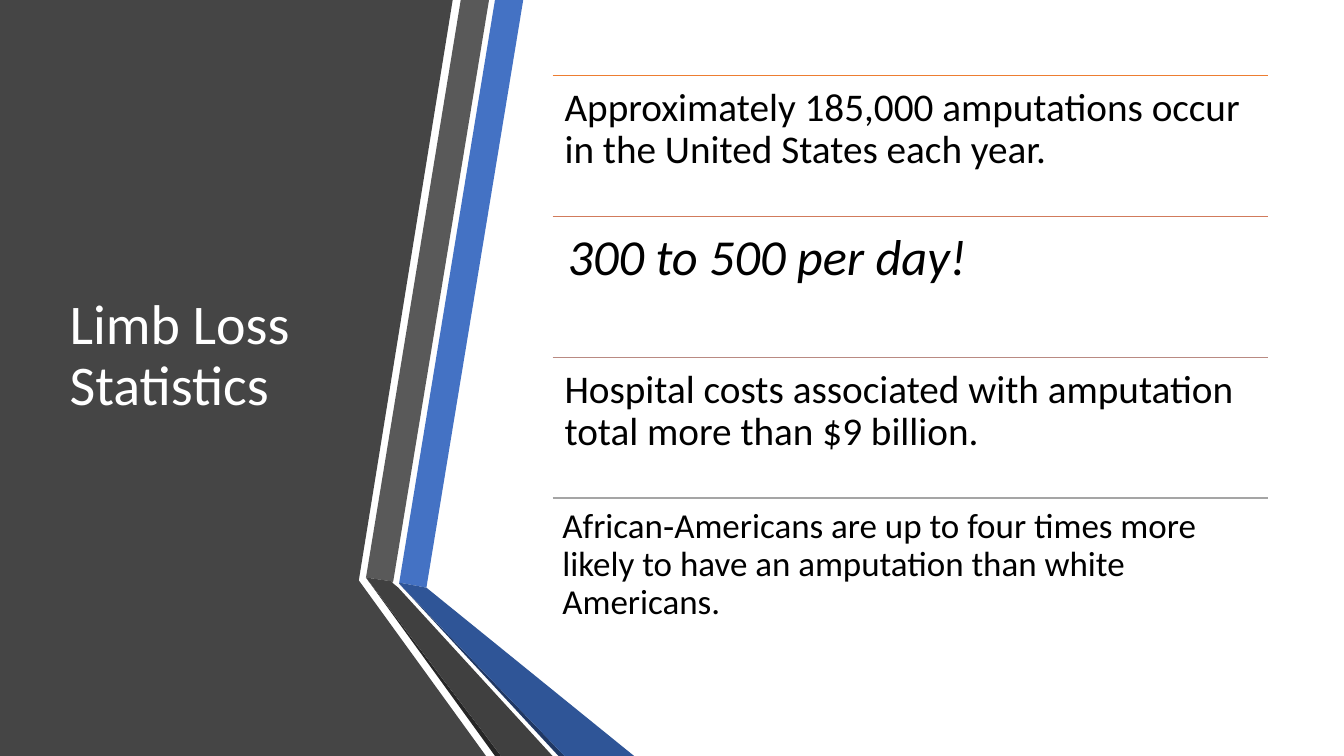
from collections import namedtuple

from pptx import Presentation
from pptx.dml.color import RGBColor
from pptx.enum.shapes import MSO_CONNECTOR
from pptx.enum.text import MSO_ANCHOR, MSO_AUTO_SIZE, PP_ALIGN
from pptx.oxml.ns import qn
from pptx.util import Inches, Pt
from lxml import etree

STRAIGHT = MSO_CONNECTOR.STRAIGHT
TOP, MIDDLE = MSO_ANCHOR.TOP, MSO_ANCHOR.MIDDLE
LEFT = PP_ALIGN.LEFT
NO_AUTOFIT = MSO_AUTO_SIZE.NONE
TITLE_ONLY = 5
COLUMNS, ROWS = 13.33, 7.5
FONT = "Calibri"

Box = namedtuple("Box", "left top width height")
SLIDE_BOX = Box(0, 0, COLUMNS, ROWS)
TITLE_BOX = Box(0.59, 0.75, 3.04, 5.58)
STATISTICS_BOX = Box(5.48, 0.75, 7.1, 5.59)

PANEL = ("454545", [(0, 0), (4.49, 0), (3.56, 5.75), (3.56, 5.76), (4.82, 7.5), (0, 7.5)])
RIBBONS = [
    ("4472C4", [(3.96, 5.78), (4.23, 5.83), (5.19, 0), (4.91, 0)]),
    ("595959", [(4.85, 0), (4.57, 0), (3.63, 5.73), (3.9, 5.77)]),
    ("262626", [(3.63, 5.73), (4.91, 7.5), (4.97, 7.5)]),
    ("203864", [(3.96, 5.79), (5.54, 7.5), (5.6, 7.5)]),
    ("2F5597", [(3.96, 5.79), (5.6, 7.5), (6.29, 7.5), (4.23, 5.83), (3.96, 5.78)]),
    ("404040", [(5.48, 7.5), (3.95, 5.83), (3.89, 5.78), (3.9, 5.77), (3.63, 5.73), (4.97, 7.5)]),
]
STATISTICS = [
    ("Approximately 185,000 amputations occur in the United States each year.",
     "ED7D31", 28, 0.12, False),
    ("300 to 500 per day!", "D17B5C", 36, 0.15, True),
    ("Hospital costs associated with amputation total more than $9 billion.",
     "B98A82", 28, 0.12, False),
    ("African‐Americans are up to four times more likely to have an amputation than white Americans.",
     "A5A5A5", 25, 0.1, False),
]


def color(value):
    return RGBColor.from_string(value)


def set_values(target, values):
    for name, value in values.items():
        setattr(target, name, value)


def place(shape, box):
    set_values(shape, {name: Inches(value) for name, value in box._asdict().items()})


def write_text(shape, text, size, font_color, inset, anchor, italic=False):
    frame = shape.text_frame
    frame.text = text
    margins = {f"margin_{side}": Inches(inset) for side in ("left", "top", "right", "bottom")}
    set_values(frame, {"word_wrap": True, "auto_size": NO_AUTOFIT,
                       "vertical_anchor": anchor, **margins})
    paragraph = frame.paragraphs[0]
    set_values(paragraph, {"alignment": LEFT, "line_spacing": 0.9})
    font = paragraph.runs[0].font
    set_values(font, {"name": FONT, "size": Pt(size), "italic": italic})
    font.color.rgb = color(font_color)


def add_outline(shapes, box, fill, points):
    corners = [(Inches(box.left + x), Inches(box.top + y)) for x, y in points]
    builder = shapes.build_freeform(*corners[0])
    builder.add_line_segments(corners[1:], close=True)
    shape = builder.convert_to_shape()
    shape.shadow.inherit = False
    shape.fill.solid()
    shape.fill.fore_color.rgb = color(fill)
    shape.line.fill.background()


def add_background(slide, box):
    add_outline(slide.shapes, box, *PANEL)
    ribbon_group = slide.shapes.add_group_shape()
    for fill, points in RIBBONS:
        add_outline(ribbon_group.shapes, box, fill, points)


def add_title(slide, box):
    title = slide.shapes.title
    place(title, box)
    write_text(title, "Limb Loss Statistics", 40, "FFFFFF", 0.1, MIDDLE)
    slide.shapes._spTree.append(title._element)


def add_rule(shapes, left, top, width, line_color):
    rule = shapes.add_connector(STRAIGHT, Inches(left), Inches(top),
                                Inches(left + width), Inches(top))
    rule.line.color.rgb = color(line_color)
    rule.line.width = Pt(1)
    etree.SubElement(rule._element.spPr, qn("a:effectLst"))


def add_statistics(slide, box):
    shapes = slide.shapes.add_group_shape().shapes
    row_height = box.height / len(STATISTICS)
    for row, (text, line_color, size, inset, italic) in enumerate(STATISTICS):
        row_box = Box(box.left, box.top + row * row_height, box.width, row_height)
        add_rule(shapes, row_box.left, row_box.top, row_box.width, line_color)
        text_box = shapes.add_textbox(*(Inches(value) for value in row_box))
        write_text(text_box, text, size, "000000", inset, TOP, italic)


def main():
    presentation = Presentation()
    set_values(presentation, {"slide_width": Inches(COLUMNS), "slide_height": Inches(ROWS)})
    slide = presentation.slides.add_slide(presentation.slide_layouts[TITLE_ONLY])
    add_background(slide, SLIDE_BOX)
    add_title(slide, TITLE_BOX)
    add_statistics(slide, STATISTICS_BOX)
    presentation.save("out.pptx")


if __name__ == "__main__":
    main()
